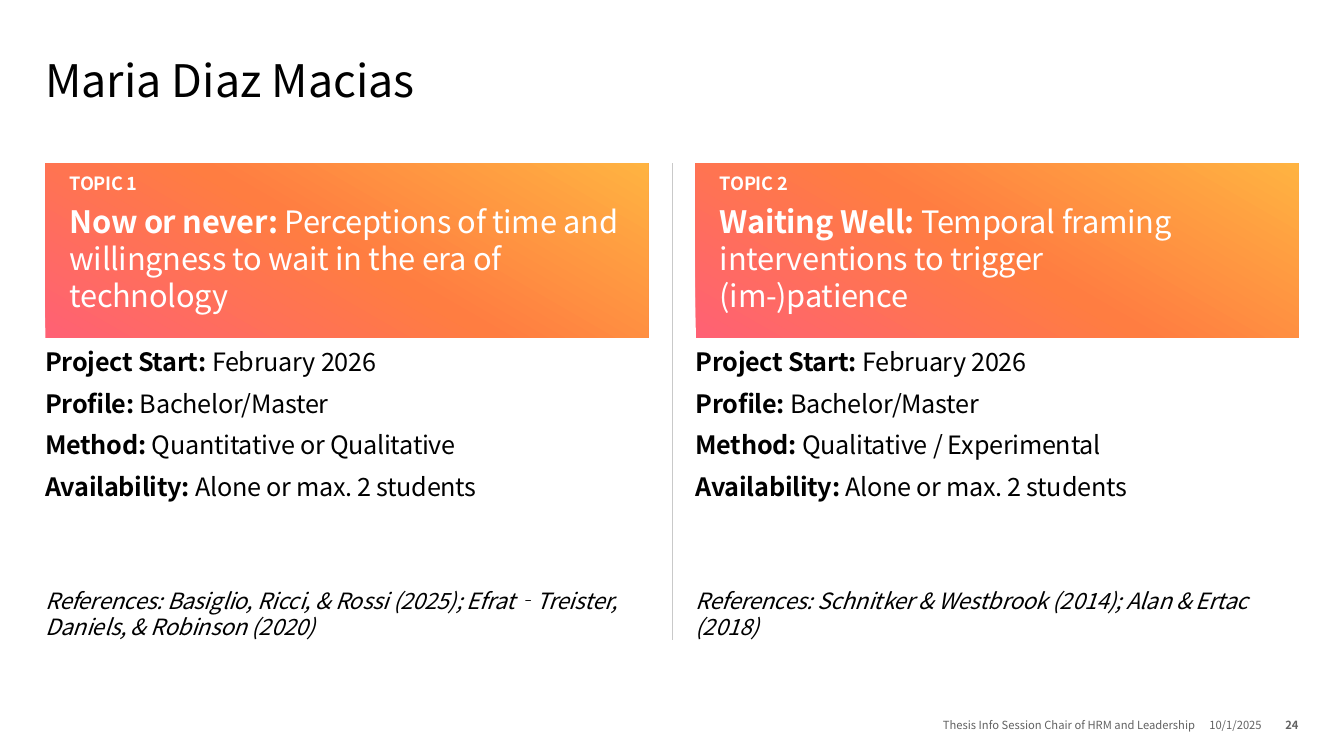
from pptx import Presentation
from pptx.dml.color import RGBColor
from pptx.enum.shapes import MSO_CONNECTOR, MSO_SHAPE
from pptx.enum.text import MSO_ANCHOR, PP_ALIGN
from pptx.oxml import parse_xml
from pptx.oxml.ns import nsdecls
from pptx.util import Inches, Pt

RECT = MSO_SHAPE.RECTANGLE
STRAIGHT = MSO_CONNECTOR.STRAIGHT
TOP, BOTTOM = MSO_ANCHOR.TOP, MSO_ANCHOR.BOTTOM
LEFT, CENTER, RIGHT = PP_ALIGN.LEFT, PP_ALIGN.CENTER, PP_ALIGN.RIGHT

FONT = "Noto Sans CJK KR"
BLACK = RGBColor(0x00, 0x00, 0x00)
WHITE = RGBColor(0xFF, 0xFF, 0xFF)
GREY = RGBColor(0x62, 0x62, 0x62)
RULE = RGBColor(0xC9, 0xC9, 0xC9)
PINK = RGBColor(0xFF, 0x61, 0x74)
ORANGE = RGBColor(0xFF, 0x7D, 0x41)
YELLOW = RGBColor(0xFF, 0xB3, 0x41)

COLUMN_WIDTH = 5.98
TOPICS = [
    {
        "left": 0.45,
        "label": "TOPIC 1",
        "title": ("Now or never: ",
                  "Perceptions of time and willingness to wait in the era of technology"),
        "facts": [("Project Start: ", "February 2026"),
                  ("Profile: ", "Bachelor/Master"),
                  ("Method: ", "Quantitative or Qualitative"),
                  ("Availability: ", "Alone or max. 2 students")],
        "references": "References: Basiglio, Ricci, & Rossi (2025); "
                      "Efrat‐Treister, Daniels, & Robinson (2020)",
    },
    {
        "left": 6.9,
        "label": "TOPIC 2",
        "title": ("Waiting Well: ",
                  "Temporal framing interventions to trigger\v(im-)patience"),
        "facts": [("Project Start: ", "February 2026"),
                  ("Profile: ", "Bachelor/Master"),
                  ("Method: ", "Qualitative / Experimental"),
                  ("Availability: ", "Alone or max. 2 students")],
        "references": "References: Schnitker & Westbrook (2014); Alan & Ertac (2018)",
    },
]
FOOTER = [
    (7.53, 4.33, "Thesis Info Session Chair of HRM and Leadership", RIGHT, False),
    (11.94, 0.63, "10/1/2025", CENTER, False),
    (12.57, 0.31, "24", RIGHT, True),
]


def set_frame(tf, anchor=TOP, inset=0, top_inset=0):
    """Set wrapping, anchor and insets of a text frame."""
    tf.word_wrap = True
    tf.vertical_anchor = anchor
    tf.margin_left = tf.margin_right = tf.margin_bottom = Inches(inset)
    tf.margin_top = Inches(top_inset)


def add_run(p, text, size, color=BLACK, bold=False, italic=False, spacing=0):
    """Add one formatted run, with line breaks at vertical tabs."""
    for i, part in enumerate(text.split("\v")):
        if i:
            p.add_line_break()
        r = p.add_run()
        r.text = part
        r.font.name = FONT
        r.font.size = Pt(size)
        r.font.bold = bold
        r.font.italic = italic
        r.font.color.rgb = color
        if spacing:
            r._r.get_or_add_rPr().set("spc", str(round(spacing * 100)))


def add_paragraph(tf, first, after=0, align=LEFT):
    """Return the first or a new paragraph with spacing and alignment."""
    p = tf.paragraphs[0] if first else tf.add_paragraph()
    p.space_before = Pt(0)
    p.space_after = Pt(after)
    p.alignment = align
    return p


def add_text(s, left, top, width, height, anchor=TOP):
    """Add an empty text box without insets and return its frame."""
    tf = s.shapes.add_textbox(Inches(left), Inches(top),
                              Inches(width), Inches(height)).text_frame
    set_frame(tf, anchor)
    return tf


def fill_gradient(sp, colors, angle):
    """Fill a shape with evenly spaced gradient colours."""
    sp.fill.background()
    step = 100000 // (len(colors) - 1)
    stops = "".join(f'<a:gs pos="{i * step}"><a:srgbClr val="{c}"/></a:gs>'
                    for i, c in enumerate(colors))
    grad = parse_xml(f'<a:gradFill {nsdecls("a")} rotWithShape="1"><a:gsLst>{stops}</a:gsLst>'
                     f'<a:lin ang="{angle * 60000}" scaled="0"/></a:gradFill>')
    props = sp._element.spPr
    props.replace(props.find("{*}noFill"), grad)


def add_banner(s, left, label, title):
    """Add the gradient banner with topic label and title."""
    sp = s.shapes.add_shape(RECT, Inches(left), Inches(1.62),
                            Inches(COLUMN_WIDTH), Inches(1.73))
    sp.shadow.inherit = False
    sp.line.fill.background()
    fill_gradient(sp, [PINK, ORANGE, YELLOW], 300)
    tf = sp.text_frame
    set_frame(tf, BOTTOM, inset=0.24, top_inset=0.05)
    p = add_paragraph(tf, True, after=6)
    add_run(p, label, 13, WHITE, bold=True, spacing=-0.2)
    p = add_paragraph(tf, False, after=6)
    for text, bold in zip(title, (True, False)):
        add_run(p, text, 22, WHITE, bold=bold, spacing=-0.2)


def add_topic(s, left, label, title, facts, references):
    """Add one topic column: banner, facts and references."""
    add_banner(s, left, label, title)
    tf = add_text(s, left, 3.44, COLUMN_WIDTH, 2.2)
    for i, (name, value) in enumerate(facts):
        p = add_paragraph(tf, i == 0, after=8)
        add_run(p, name, 18, bold=True, spacing=-0.2)
        add_run(p, value, 18, spacing=-0.2)
    tf = add_text(s, left, 5.82, COLUMN_WIDTH, 0.54)
    p = add_paragraph(tf, True, after=8)
    add_run(p, references, 16, italic=True, spacing=-0.2)


def add_divider(s):
    """Add the thin vertical rule between the columns."""
    line = s.shapes.add_connector(STRAIGHT, Inches(6.67), Inches(1.62),
                                  Inches(6.67), Inches(6.35))
    line.line.color.rgb = RULE
    line.line.width = Pt(0.5)
    line._element.spPr.append(parse_xml(f'<a:effectLst {nsdecls("a")}/>'))


def main():
    """Build the slide and save it."""
    prs = Presentation()
    prs.slide_width, prs.slide_height = Inches(13.33), Inches(7.5)
    s = prs.slides.add_slide(prs.slide_layouts[6])
    add_divider(s)
    p = add_paragraph(add_text(s, 0.45, 0.52, 12.44, 0.63), True, after=6)
    add_run(p, "Maria Diaz Macias", 32)
    for topic in TOPICS:
        add_topic(s, **topic)
    for left, width, text, align, bold in FOOTER:
        p = add_paragraph(add_text(s, left, 7.06, width, 0.2, BOTTOM), True, align=align)
        add_run(p, text, 8, GREY, bold=bold)
    prs.save("out.pptx")


if __name__ == "__main__":
    main()
